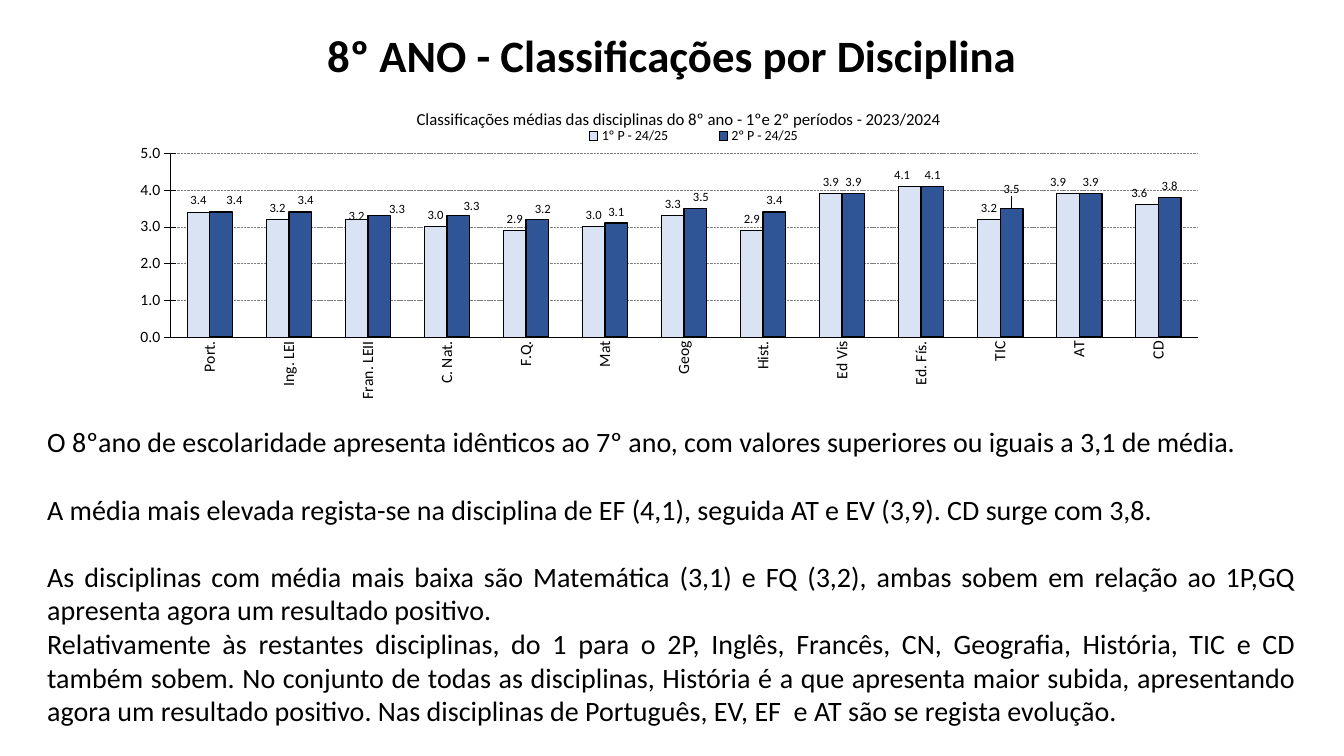
import dataclasses

import lxml.etree
import pptx
import pptx.chart.data
import pptx.dml.color
import pptx.enum.chart
import pptx.enum.dml
import pptx.enum.text
import pptx.oxml.ns
import pptx.util

qn = pptx.oxml.ns.qn
Pt = pptx.util.Pt
RGB = pptx.dml.color.RGBColor.from_string
Align = pptx.enum.text.PP_ALIGN


@dataclasses.dataclass(frozen=True)
class Theme:
    font: str = "Calibri"
    ink: str = "000000"
    grid: str = "808080"
    first_term: str = "DAE3F3"
    second_term: str = "2F5597"
    heading: float = 32
    body: float = 20
    chart_title: float = 12
    axis: float = 11.2
    legend: float = 10
    label: float = 9
    thin: float = 0.25


@dataclasses.dataclass(frozen=True)
class Term:
    name: str
    color: str
    outline: float
    grades: tuple
    label_shifts: dict


class Deck:
    columns, rows = 160, 90

    def __init__(self, theme):
        self.theme = theme
        self.prs = pptx.Presentation()
        self.prs.slide_width = pptx.util.Inches(13.33)
        self.prs.slide_height = pptx.util.Inches(7.5)
        self.slide = self.prs.slides.add_slide(self.prs.slide_layouts[5])

    def box(self, col, row, width, height):
        dx = self.prs.slide_width / self.columns
        dy = self.prs.slide_height / self.rows
        return [round(v) for v in (col * dx, row * dy, width * dx, height * dy)]

    def style(self, font, size, bold=False):
        font.name = self.theme.font
        font.size = Pt(size)
        font.bold = bold
        font.color.rgb = RGB(self.theme.ink)

    def line(self, line, color, width):
        line.color.rgb = RGB(color)
        line.width = Pt(width)

    def layout(self, parent, after, **percents):
        for old in parent.findall(qn("c:layout")):
            parent.remove(old)
        layout = lxml.etree.Element(qn("c:layout"))
        manual = lxml.etree.SubElement(layout, qn("c:manualLayout"))
        if after is None:
            parent.insert(0, layout)
            lxml.etree.SubElement(manual, qn("c:layoutTarget")).set("val", "inner")
        else:
            parent.find(qn(after)).addnext(layout)
        if after != "c:idx":
            for mode in ("xMode", "yMode"):
                lxml.etree.SubElement(manual, qn("c:" + mode)).set("val", "edge")
        for key, percent in percents.items():
            lxml.etree.SubElement(manual, qn("c:" + key)).set("val", f"{percent / 100:.4f}")

    def title(self, text, *cells):
        sp = self.slide.shapes.title
        sp.left, sp.top, sp.width, sp.height = self.box(*cells)
        tf = sp.text_frame
        tf.text = text
        tf.vertical_anchor = pptx.enum.text.MSO_ANCHOR.MIDDLE
        p = tf.paragraphs[0]
        p.alignment = Align.CENTER
        p.line_spacing = 0.9
        self.style(p.runs[0].font, self.theme.heading, True)

    def text(self, paragraphs, *cells):
        tf = self.slide.shapes.add_textbox(*self.box(*cells)).text_frame
        tf.word_wrap = True
        for i, (text, gap) in enumerate(paragraphs):
            p = tf.add_paragraph() if i else tf.paragraphs[0]
            p.text = text
            p.alignment = Align.JUSTIFY
            p.space_before = Pt(gap)
            self.style(p.runs[0].font, self.theme.body)

    def column_chart(self, title, subjects, terms, *cells):
        data = pptx.chart.data.CategoryChartData(number_format="0.0")
        data.categories = subjects
        for term in terms:
            data.add_series(term.name, term.grades)
        kind = pptx.enum.chart.XL_CHART_TYPE.COLUMN_CLUSTERED
        chart = self.slide.shapes.add_chart(kind, *self.box(*cells), data).chart
        self.style(chart.font, self.theme.axis)
        tf = chart.chart_title.text_frame
        tf.text = title
        self.style(tf.paragraphs[0].runs[0].font, self.theme.chart_title)
        self.layout(chart.chart_title._element, "c:tx", x=26.4, y=5)
        chart.has_legend = True
        chart.legend.position = pptx.enum.chart.XL_LEGEND_POSITION.RIGHT
        chart.legend.include_in_layout = False
        self.style(chart.legend.font, self.theme.legend)
        self.layout(chart.legend._element, "c:legendPos", x=38, y=11.5, w=27, h=7)
        plot = chart.plots[0]
        plot.gap_width = 150
        plot.overlap = 0
        plot.vary_by_categories = False
        self.layout(chart._chartSpace.chart.plotArea, None, x=4.6, y=20.4, w=92.1, h=58.1)
        self.axes(chart.category_axis, chart.value_axis)
        for series, term in zip(plot.series, terms):
            self.series(series, term)

    def axes(self, category, value):
        marks = pptx.enum.chart.XL_TICK_MARK
        for axis, mark in ((category, marks.NONE), (value, marks.CROSS)):
            axis.major_tick_mark = mark
            axis.minor_tick_mark = marks.NONE
            self.line(axis.format.line, self.theme.ink, self.theme.thin)
            self.style(axis.tick_labels.font, self.theme.axis)
        category.has_major_gridlines = False
        body = category._element.find(qn("c:txPr")).find(qn("a:bodyPr"))
        body.set("rot", "-5400000")
        body.set("vert", "horz")
        value.minimum_scale, value.maximum_scale, value.major_unit = 0, 5, 1
        value.tick_labels.number_format = "0.0"
        value.tick_labels.number_format_is_linked = False
        value.has_major_gridlines = True
        rule = value.major_gridlines.format.line
        self.line(rule, self.theme.grid, self.theme.thin)
        rule.dash_style = pptx.enum.dml.MSO_LINE.SQUARE_DOT
        rule._ln.find(qn("a:prstDash")).set("val", "sysDash")

    def series(self, series, term):
        outside = pptx.enum.chart.XL_LABEL_POSITION.OUTSIDE_END
        series.format.fill.solid()
        series.format.fill.fore_color.rgb = RGB(term.color)
        series.invert_if_negative = False
        self.line(series.format.line, self.theme.ink, term.outline)
        labels = series.data_labels
        labels.show_value = True
        labels.number_format = "0.0"
        labels.number_format_is_linked = False
        labels.position = outside
        self.style(labels.font, self.theme.label)
        for i, (x, y) in term.label_shifts.items():
            label = series.points[i].data_label
            label.position = outside
            self.style(label.font, self.theme.label)
            self.layout(label._dLbl, "c:idx", x=x, y=y)


SUBJECTS = ("Port.", "Ing. LEI", "Fran. LEII", "C. Nat.", "F.Q.", "Mat", "Geog",
            "Hist.", "Ed Vis", "Ed. Fís.", "TIC", "AT", "CD")

COMMENTS = (
    ("O 8ºano de escolaridade apresenta idênticos ao 7º ano, com valores superiores ou "
     "iguais a 3,1 de média.", 0),
    ("A média mais elevada regista-se na disciplina de EF (4,1), seguida AT e EV (3,9). "
     "CD surge com 3,8.", 24),
    ("As disciplinas com média mais baixa são Matemática (3,1) e FQ (3,2), ambas sobem em "
     "relação ao 1P,GQ apresenta agora um resultado positivo.", 24),
    ("Relativamente às restantes disciplinas, do 1 para o 2P, Inglês, Francês, CN, Geografia, "
     "História, TIC e CD também sobem. No conjunto de todas as disciplinas, História é a que "
     "apresenta maior subida, apresentando agora um resultado positivo. Nas disciplinas de "
     "Português, EV, EF  e AT são se regista evolução.", 0),
)


def main():
    theme = Theme()
    terms = (
        Term("1º P - 24/25", theme.first_term, 0.75,
             (3.4, 3.2, 3.2, 3.0, 2.9, 3.0, 3.3, 2.9, 3.9, 4.1, 3.2, 3.9, 3.6),
             {2: (0, 2.5), 9: (-0.7, 0), 11: (-0.9, 0), 12: (-0.7, 0)}),
        Term("2º P - 24/25", theme.second_term, 1,
             (3.4, 3.4, 3.3, 3.3, 3.2, 3.1, 3.5, 3.4, 3.9, 4.1, 3.5, 3.9, 3.8),
             {0: (1.2, 0), 1: (0.5, 0), 2: (1.6, 1.6), 3: (1.2, 0.5), 4: (0.5, 0.5),
              6: (0.5, 0), 10: (0, -2.5)}),
    )
    deck = Deck(theme)
    deck.title("8º ANO - Classificações por Disciplina", 11, 4.8, 138, 4.2)
    deck.column_chart("Classificações médias das disciplinas do 8º ano - 1ºe 2º períodos - 2023/2024",
                      SUBJECTS, terms, 14.16, 10.56, 132.84, 37.68)
    deck.text(COMMENTS, 4.44, 50, 151, 37.56)
    deck.prs.save("out.pptx")


if __name__ == "__main__":
    main()
